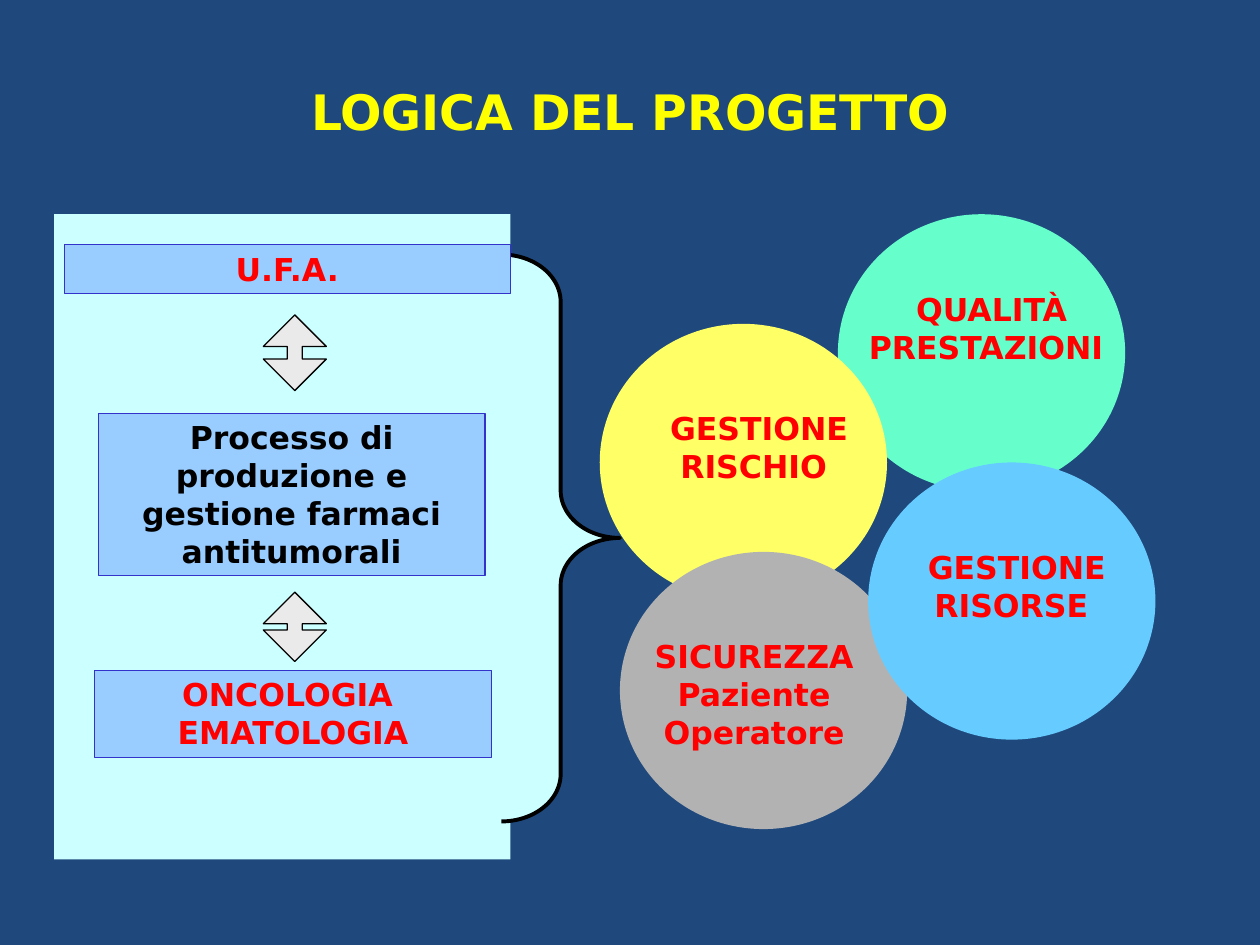
from dataclasses import dataclass

from pptx import Presentation
from pptx.dml.color import RGBColor
from pptx.enum.shapes import MSO_SHAPE
from pptx.enum.text import MSO_ANCHOR, MSO_AUTO_SIZE, PP_ALIGN
from pptx.util import Inches, Pt

RECT, OVAL = MSO_SHAPE.RECTANGLE, MSO_SHAPE.OVAL
BRACE, ARROW = MSO_SHAPE.RIGHT_BRACE, MSO_SHAPE.UP_DOWN_ARROW
CENTER, TOP = PP_ALIGN.CENTER, MSO_ANCHOR.TOP
GROW = MSO_AUTO_SIZE.SHAPE_TO_FIT_TEXT


@dataclass(frozen=True)
class Theme:
    font: str = "DejaVu Sans"
    title_size: float = 27.9
    body_size: float = 18
    background: str = "1F497D"
    title: str = "FFFF00"
    accent: str = "FF0000"
    dark: str = "000000"
    panel: str = "CCFFFF"
    box: str = "99CCFF"
    box_line: str = "3333CC"
    arrow: str = "EAEAEA"


T = Theme()

# Content: boxes are left, top, width, height in inches
TITLE = "LOGICA DEL PROGETTO"
STEPS = [
    (["U.F.A."], T.accent, (0.51, 1.94, 3.54, 0.39)),
    (["Processo di produzione e gestione farmaci antitumorali"], T.dark,
     (0.78, 3.28, 3.07, 1.29)),
    (["ONCOLOGIA ", "EMATOLOGIA"], T.accent, (0.75, 5.32, 3.15, 0.69)),
]
ARROWS = [(2.5, 0.6), (4.7, 0.55)]  # top, height
ARROW_LEFT, ARROW_WIDTH, ARROW_HEAD = 2.09, 0.5, 0.12
CIRCLE_SIZE = (2.2, 2.28)
CIRCLES = [  # left, top, fill
    (6.69, 1.66, "66FFCC"),
    (4.8, 2.53, "FFFF66"),
    (4.96, 4.34, "B2B2B2"),
    (6.93, 3.63, "66CCFF"),
]
LABELS = [
    (["GESTIONE RISCHIO "], (5.16, 3.2, 1.73, 0.71)),
    (["SICUREZZA", "Paziente", "Operatore"], (5.08, 5.01, 1.81, 1.01)),
    (["QUALITÀ PRESTAZIONI "], (6.65, 2.25, 2.44, 0.71)),
    (["GESTIONE RISORSE "], (6.97, 4.3, 2.2, 0.71)),
]


def rgb(value):
    return RGBColor.from_string(value)


def add_shape(slide, kind, box, fill, line=None, width=0.75):
    sp = slide.shapes.add_shape(kind, *map(Inches, box))
    sp.shadow.inherit = False
    sp.fill.solid()
    sp.fill.fore_color.rgb = rgb(fill)
    if line:
        sp.line.color.rgb = rgb(line)
        sp.line.width = Pt(width)
    else:
        sp.line.fill.background()
    return sp


def write(sp, lines, color, size=T.body_size):
    tf = sp.text_frame
    tf.word_wrap = True
    tf.vertical_anchor = TOP
    for i, line in enumerate(lines):
        p = tf.add_paragraph() if i else tf.paragraphs[0]
        p.alignment = CENTER
        r = p.add_run()
        r.text = line
        r.font.name = T.font
        r.font.size = Pt(size)
        r.font.bold = True
        r.font.color.rgb = rgb(color)
    return tf


def main():
    prs = Presentation()
    prs.slide_width, prs.slide_height = Inches(10), Inches(7.5)
    slide = prs.slides.add_slide(prs.slide_layouts[5])
    slide.background.fill.solid()
    slide.background.fill.fore_color.rgb = rgb(T.background)

    # Title
    title = slide.shapes.title
    title.left, title.top, title.width, title.height = map(
        Inches, (0.75, 0.6, 8.5, 1.18))
    write(title, [TITLE], T.title, T.title_size).auto_size = MSO_AUTO_SIZE.NONE

    # Panel and brace
    add_shape(slide, RECT, (0.43, 1.7, 3.62, 5.12), T.panel)
    brace = add_shape(slide, BRACE, (3.98, 2.02, 0.94, 4.5), T.panel, T.dark, 2.25)
    brace.adjustments[0] = 0.4

    # Overlapping goals
    for left, top, fill in CIRCLES:
        add_shape(slide, OVAL, (left, top, *CIRCLE_SIZE), fill).rotation = 270

    # Process steps and the arrows between them
    for lines, color, box in STEPS:
        sp = add_shape(slide, RECT, box, T.box, T.box_line)
        tf = write(sp, lines, color)
        tf.margin_left = tf.margin_right = Inches(0.08)
        tf.margin_top = tf.margin_bottom = Inches(0.04)
        tf.auto_size = GROW
    for top, height in ARROWS:
        sp = add_shape(slide, ARROW, (ARROW_LEFT, top, ARROW_WIDTH, height),
                       T.arrow, T.dark)
        sp.adjustments[0] = 0.5
        sp.adjustments[1] = ARROW_HEAD / ARROW_WIDTH

    # Goal labels
    for lines, box in LABELS:
        sp = slide.shapes.add_textbox(*map(Inches, box))
        write(sp, lines, T.accent).auto_size = GROW

    prs.save("out.pptx")


if __name__ == "__main__":
    main()
